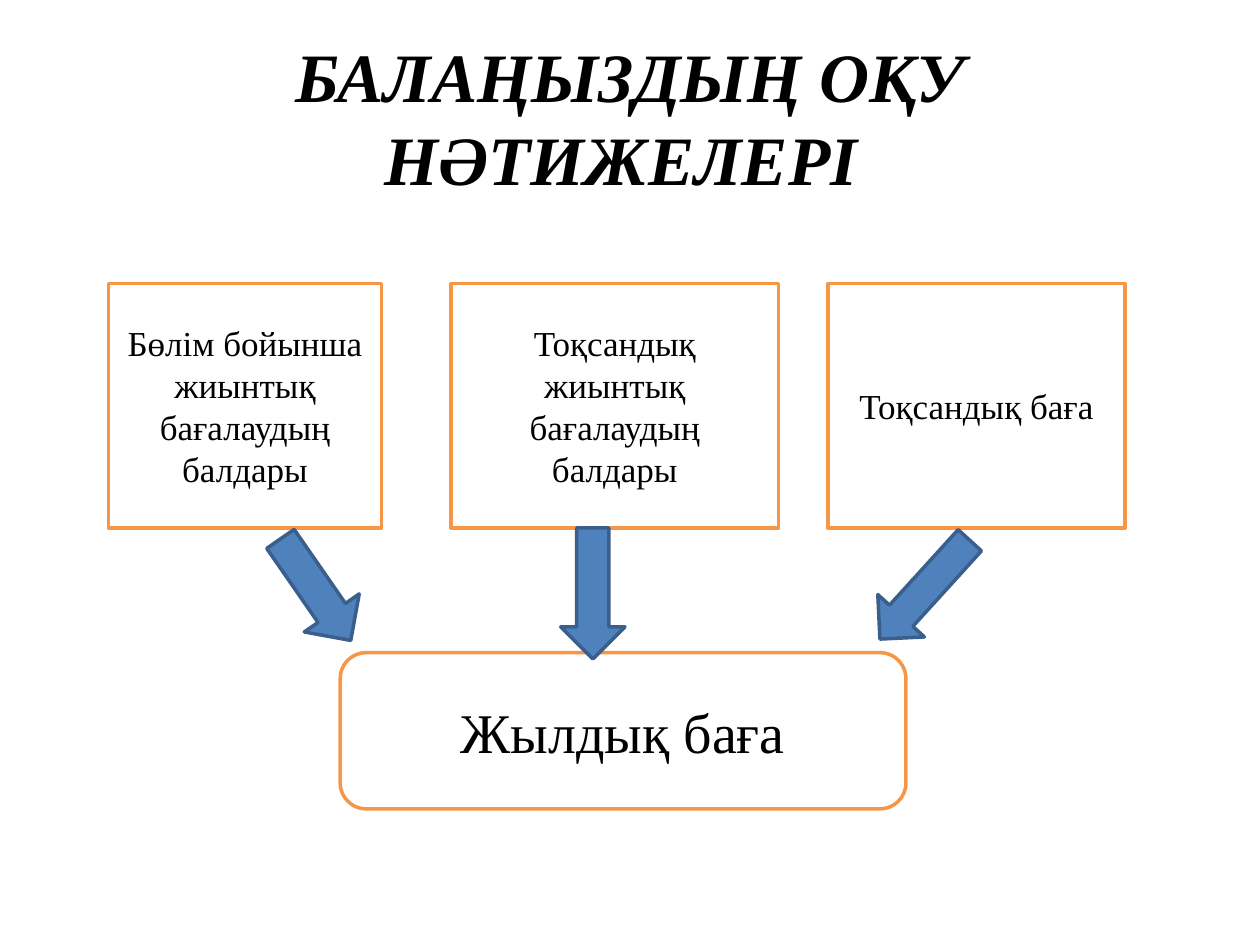
from pptx import Presentation
from pptx.dml.color import RGBColor
from pptx.enum.shapes import MSO_SHAPE
from pptx.enum.text import MSO_ANCHOR, PP_ALIGN
from pptx.util import Inches, Pt

RECTANGLE = MSO_SHAPE.RECTANGLE
ROUNDED = MSO_SHAPE.ROUNDED_RECTANGLE
DOWN_ARROW = MSO_SHAPE.DOWN_ARROW
RIGHT_ARROW = MSO_SHAPE.RIGHT_ARROW
MIDDLE = MSO_ANCHOR.MIDDLE
CENTER = PP_ALIGN.CENTER


def color(value):
    return RGBColor.from_string(value)


def write(shape, text, size, emphasis=False):
    frame = shape.text_frame
    frame.word_wrap = True
    frame.vertical_anchor = MIDDLE
    paragraph = frame.paragraphs[0]
    paragraph.alignment = CENTER
    run = paragraph.add_run()
    run.text = text
    run.font.name = "Times New Roman"
    run.font.size = Pt(size)
    run.font.bold = run.font.italic = emphasis
    run.font.color.rgb = color("000000")


presentation = Presentation()
presentation.slide_width = Inches(10)
presentation.slide_height = Inches(7.5)
slide = presentation.slides.add_slide(presentation.slide_layouts[6])

# Title
title = slide.shapes.add_textbox(Inches(0.5), Inches(0.3), Inches(9), Inches(1.25))
write(title, "БАЛАҢЫЗДЫҢ ОҚУ НӘТИЖЕЛЕРІ ", 39.6, emphasis=True)

# Three result boxes and the yearly grade below them
boxes = [
    (RECTANGLE, 0.86, 2.25, 2.17, 1.94, "Бөлім бойынша жиынтық бағалаудың балдары", 20),
    (RECTANGLE, 3.58, 2.25, 2.6, 1.94, "Тоқсандық жиынтық бағалаудың балдары", 20),
    (RECTANGLE, 6.57, 2.25, 2.36, 1.94, "Тоқсандық баға", 20),
    (ROUNDED, 2.7, 5.18, 4.49, 1.24, "Жылдық баға", 32),
]
for kind, left, top, width, height, text, size in boxes:
    box = slide.shapes.add_shape(kind, Inches(left), Inches(top), Inches(width), Inches(height))
    box.shadow.inherit = False
    box.fill.solid()
    box.fill.fore_color.rgb = color("FFFFFF")
    box.line.color.rgb = color("F79646")
    box.line.width = Pt(2)
    write(box, text, size)

# Arrows leading to the yearly grade
arrows = [
    (DOWN_ARROW, 2.24, 4.19, 0.53, 0.98, 325.3),
    (RIGHT_ARROW, 6.81, 4.43, 1.06, 0.5, 132.3),
    (DOWN_ARROW, 4.45, 4.19, 0.51, 1.04, 0),
]
for kind, left, top, width, height, rotation in arrows:
    arrow = slide.shapes.add_shape(kind, Inches(left), Inches(top), Inches(width), Inches(height))
    arrow.rotation = rotation
    arrow.shadow.inherit = False
    arrow.fill.solid()
    arrow.fill.fore_color.rgb = color("4F81BD")
    arrow.line.color.rgb = color("3A5F8C")
    arrow.line.width = Pt(2)

presentation.save("out.pptx")
